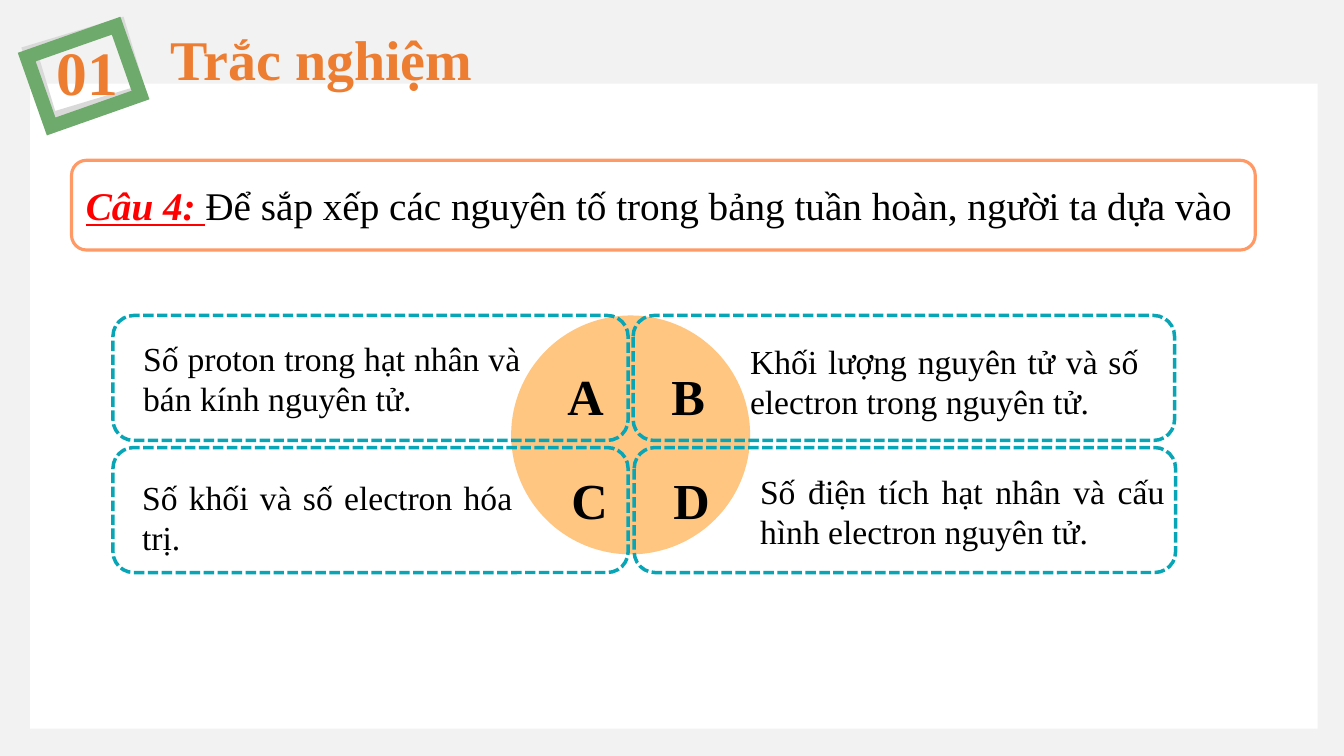
import pptx
import pptx.util
import pptx.dml.color
import pptx.enum.dml
import pptx.enum.shapes
import pptx.enum.text
from lxml import etree

Inches, Pt = pptx.util.Inches, pptx.util.Pt
SHAPE = pptx.enum.shapes.MSO_SHAPE
ALIGN = pptx.enum.text.PP_ALIGN
ANCHOR = pptx.enum.text.MSO_ANCHOR

FONT = "Times New Roman"
COLORS = {
    "background": "F2F2F2", "panel": "FFFFFF", "frame": "6EAA6B",
    "frame_shadow": "D9D9D9", "heading": "ED7D31", "question": "FF9966",
    "label": "FF0000", "text": "000000", "circle": "FFC681", "card": "07A5B5",
}


def color(name):
    return pptx.dml.color.RGBColor.from_string(COLORS[name])


def add_shape(s, kind, box, fill=None, line=None, width=1):
    sp = s.shapes.add_shape(kind, *map(Inches, box))
    sp.shadow.inherit = False
    if fill:
        sp.fill.solid()
        sp.fill.fore_color.rgb = color(fill)
    else:
        sp.fill.background()
    if line:
        sp.line.color.rgb = color(line)
        sp.line.width = Pt(width)
    else:
        sp.line.fill.background()
    return sp


def set_font(font, size, name="text", bold=False):
    font.name, font.size, font.bold = FONT, Pt(size), bold
    font.color.rgb = color(name)


def add_text(s, box, text, size, name="text", bold=False, wrap=True, align=None):
    sp = s.shapes.add_textbox(*map(Inches, box))
    tf = sp.text_frame
    tf.word_wrap = wrap
    p = tf.paragraphs[0]
    p.text = text
    p.alignment = align
    set_font(p.font, size, name, bold)
    return tf


def add_header(s, box, number, title):
    x, y, w, h = box
    # Two tilted frames behind the number
    for dx, dy, fw, fh, angle, name in (
        (0.02, 0, w - 0.02, h - 0.03, 343.2, "frame_shadow"),
        (0, 0.02, w, h, 340.6, "frame"),
    ):
        sp = add_shape(s, SHAPE.RECTANGLE, (x + dx, y + dy, fw, fh), line=name, width=10)
        sp.rotation = angle
        ln = sp.line._get_or_add_ln()
        etree.SubElement(ln, pptx.oxml.ns.qn("a:miter"), lim="800000")
    add_text(s, (x + 1.23, y - 0.18, 3.23, 0.77), title, 40, "heading", True, wrap=False)
    add_text(s, (x + 0.1, y - 0.08, 0.82, 0.84), number, 44, "heading", True, wrap=False)


def add_question(s, box, label, question):
    sp = add_shape(s, SHAPE.ROUNDED_RECTANGLE, box, "panel", "question", 2.25)
    tf = sp.text_frame
    tf.word_wrap = True
    tf.vertical_anchor = ANCHOR.MIDDLE
    p = tf.paragraphs[0]
    p.alignment = ALIGN.JUSTIFY
    r = p.add_run()
    r.text = label
    set_font(r.font, 28, "label", True)
    r.font.italic = r.font.underline = True
    r = p.add_run()
    r.text = question
    set_font(r.font, 28)


def add_answers(s, box, answers):
    x, y, w, h = box
    gap = 0.07
    card_h = (h - gap) / 2
    # Circle behind the four cards
    add_shape(s, SHAPE.OVAL, (x + 3.95, y, 2.37, 2.37), "circle")
    for i, (letter, text, text_box, letter_at, card_x, inset) in enumerate(answers):
        top = y + i // 2 * (card_h + gap)
        left = x + card_x
        card_w = 5.11 if i % 2 == 0 else w - 5.17
        dx, dy, tw = text_box
        tf = add_text(s, (left + dx, top + dy, tw, 0.91), text, 24, align=ALIGN.JUSTIFY)
        tf.margin_left = Inches(inset)
        sp = add_shape(s, SHAPE.ROUNDED_RECTANGLE, (left, top, card_w, card_h),
                       line="card", width=2.5)
        # Square dots, as in the preset "sysDash"
        sp.line.dash_style = pptx.enum.dml.MSO_LINE.SQUARE_DOT
        lx, ly = letter_at
        add_text(s, (left + lx, top + ly, 0.5, 0.71), letter, 36, bold=True)


def build_slide(prs):
    s = prs.slides.add_slide(prs.slide_layouts[6])
    s.background.fill.solid()
    s.background.fill.fore_color.rgb = color("background")
    add_shape(s, SHAPE.RECTANGLE, (0.3, 0.83, 12.77, 6.4), "panel")
    add_header(s, (0.36, 0.37, 0.94, 0.73), "01", "Trắc nghiệm")
    add_question(s, (0.71, 1.59, 11.74, 0.89), "Câu 4: ",
                 "Để sắp xếp các nguyên tố trong bảng tuần hoàn, người ta dựa vào")
    # Letter, text, text offset and width, letter offset, card offset, left inset
    add_answers(s, (1.12, 3.13, 10.54, 2.55), [
        ("A", "Số proton trong hạt nhân và bán kính nguyên tử.",
         (0.17, 0.17, 3.97), (4.41, 0.44), 0, 0.13),
        ("B", "Khối lượng nguyên tử và số electron trong nguyên tử.",
         (1.06, 0.2, 4.05), (0.28, 0.44), 5.16, 0.1),
        ("C", "Số khối và số electron hóa trị.",
         (0.16, 0.24, 3.9), (4.45, 0.16), 0, 0.13),
        ("D", "Số điện tích hạt nhân và cấu hình electron nguyên tử.",
         (1.15, 0.18, 4.21), (0.29, 0.16), 5.17, 0.1),
    ])


def main():
    prs = pptx.Presentation()
    prs.slide_width, prs.slide_height = Inches(13.33), Inches(7.5)
    build_slide(prs)
    prs.save("out.pptx")


if __name__ == "__main__":
    main()
